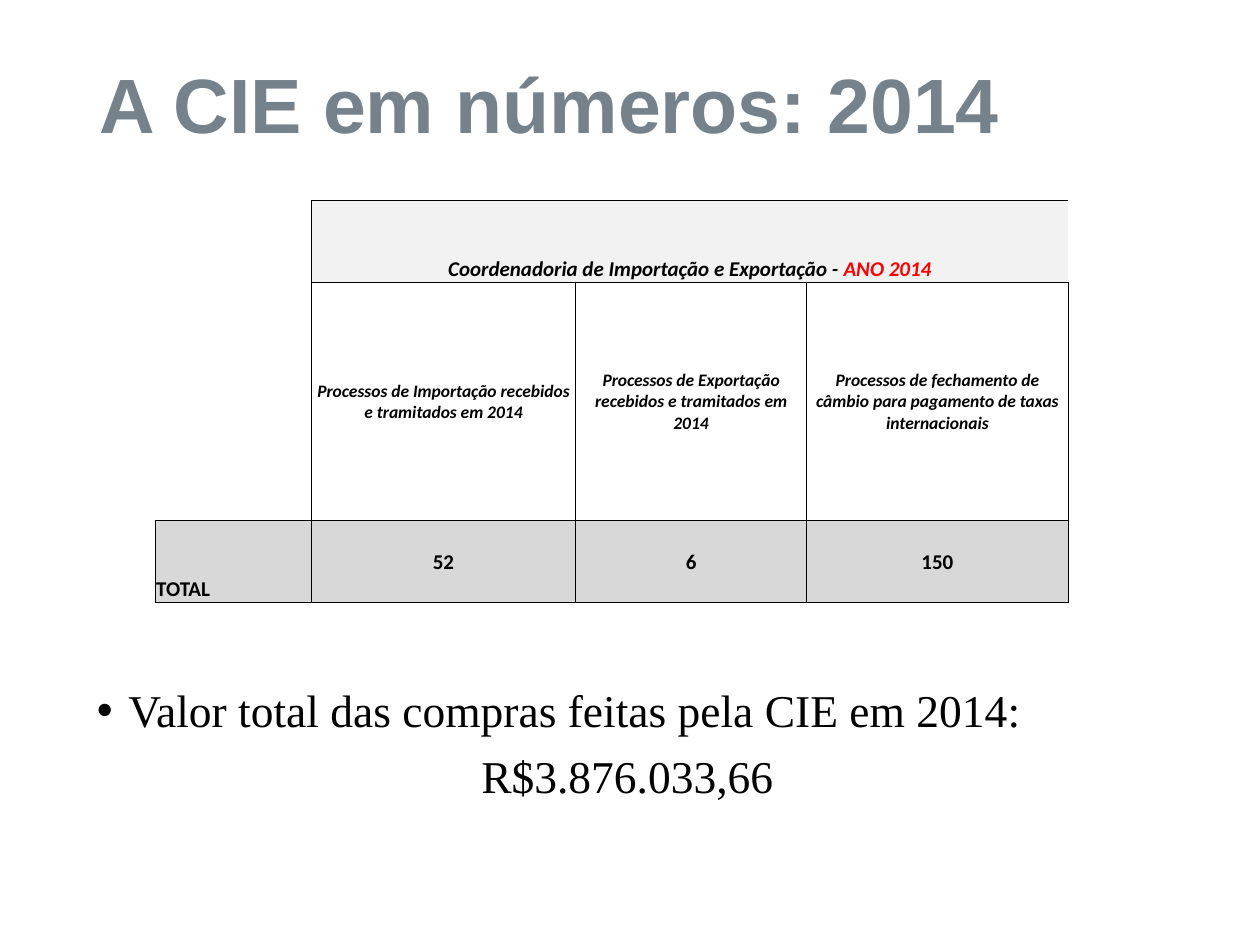
"""Builds the slide on the 2014 figures of the import and export office."""
from dataclasses import dataclass
from typing import Optional

import pptx
import pptx.dml.color
import pptx.enum.text
import pptx.oxml
import pptx.oxml.ns
import pptx.util
from pptx.util import Inches

ALIGN = pptx.enum.text.PP_ALIGN
ANCHOR = pptx.enum.text.MSO_ANCHOR


@dataclass(frozen=True)
class Theme:
    title: str = "75818B"
    ink: str = "000000"
    accent: str = "FF0000"
    header_fill: str = "F2F2F2"
    total_fill: str = "D8D8D8"
    title_font: str = "Arial"
    table_font: str = "Calibri"
    body_font: str = "Times New Roman"
    title_size: int = 44
    body_size: int = 26
    table_size: int = 12
    label_size: int = 10
    border: float = 0.5


@dataclass(frozen=True)
class Entry:
    row: int
    column: int
    text: str
    size: int
    italic: bool = False
    fill: Optional[str] = None
    align: ALIGN = ALIGN.CENTER
    anchor: ANCHOR = ANCHOR.MIDDLE
    accent: str = ""


THEME = Theme()
COLUMNS = (1.24, 2.1, 1.83, 2.08)
ROWS = (0.65, 1.89, 0.65, 0.43)
LABELS = (
    "Processos de Importação recebidos e tramitados em 2014",
    "Processos de Exportação recebidos e tramitados em 2014",
    "Processos de fechamento de câmbio para pagamento de taxas internacionais",
)
TOTALS = ("52", "6", "150")
ENTRIES = [
    Entry(0, 1, "Coordenadoria de Importação e Exportação - ", THEME.table_size, True,
          THEME.header_fill, anchor=ANCHOR.BOTTOM, accent="ANO 2014"),
    *(Entry(1, column, label, THEME.label_size, True)
      for column, label in enumerate(LABELS, 1)),
    Entry(2, 0, "TOTAL", THEME.table_size, fill=THEME.total_fill,
          align=ALIGN.LEFT, anchor=ANCHOR.BOTTOM),
    *(Entry(2, column, total, THEME.table_size, fill=THEME.total_fill)
      for column, total in enumerate(TOTALS, 1)),
]


def add_text(para, text: str, *, size: float, font: str, color: str,
             bold: bool = False, italic: bool = False) -> None:
    """Append a formatted run to a paragraph."""
    span = para.add_run()
    span.text = text
    span.font.size = pptx.util.Pt(size)
    span.font.name = font
    span.font.bold = bold
    span.font.italic = italic
    span.font.color.rgb = pptx.dml.color.RGBColor.from_string(color)


def set_borders(cell, sides: str) -> None:
    """Rule the named sides of a cell and clear the others."""
    properties = cell._tc.get_or_add_tcPr()
    for position, side in enumerate("LRTB"):
        line = pptx.oxml.parse_xml(
            f'<a:ln{side} {pptx.oxml.ns.nsdecls("a")} w="{int(THEME.border * 12700)}"/>')
        if side in sides:
            fill = pptx.oxml.ns.qn("a:solidFill")
            color = line.makeelement(pptx.oxml.ns.qn("a:srgbClr"), {"val": THEME.ink})
            solid = line.makeelement(fill, {})
            solid.append(color)
            line.append(solid)
        else:
            line.append(line.makeelement(pptx.oxml.ns.qn("a:noFill"), {}))
        properties.insert(position, line)


def border_sides(row: int, column: int) -> str:
    """Give the ruled sides of the cell at a grid position."""
    if row == 3:
        return "T"
    if row < 2 and column == 0:
        return "RB" if row == 1 else "R"
    if row == 0:
        return "TB" + {1: "L", 3: "R"}.get(column, "")
    return "LRTB"


def fill_cell(cell, entry: Entry) -> None:
    """Write one table entry into its cell."""
    cell.margin_left = cell.margin_right = cell.margin_top = Inches(0.01)
    cell.margin_bottom = 0
    cell.vertical_anchor = entry.anchor
    if entry.fill:
        cell.fill.solid()
        cell.fill.fore_color.rgb = pptx.dml.color.RGBColor.from_string(entry.fill)
    para = cell.text_frame.paragraphs[0]
    para.alignment = entry.align
    for text, color in ((entry.text, THEME.ink), (entry.accent, THEME.accent)):
        if text:
            add_text(para, text, size=entry.size, font=THEME.table_font,
                     color=color, bold=True, italic=entry.italic)


def add_title(page) -> None:
    """Place and format the title."""
    box = page.shapes.title
    box.left, box.top, box.width, box.height = map(Inches, (0.69, 0.4, 8.62, 0.93))
    box.text_frame.vertical_anchor = ANCHOR.MIDDLE
    para = box.text_frame.paragraphs[0]
    para.alignment = ALIGN.LEFT
    para.line_spacing = 0.9
    add_text(para, "A CIE em números: 2014", size=THEME.title_size,
             font=THEME.title_font, color=THEME.title, bold=True)


def add_figures(page) -> None:
    """Draw the table of processes."""
    table = page.shapes.add_table(
        len(ROWS), len(COLUMNS), Inches(1.23), Inches(1.59),
        Inches(sum(COLUMNS)), Inches(sum(ROWS))).table
    table.first_row = table.horz_banding = False
    for column, width in zip(table.columns, COLUMNS):
        column.width = Inches(width)
    for row, height in zip(table.rows, ROWS):
        row.height = Inches(height)
    for row in range(len(ROWS)):
        for column in range(len(COLUMNS)):
            cell = table.cell(row, column)
            cell.fill.background()
            set_borders(cell, border_sides(row, column))
    table.cell(0, 1).merge(table.cell(0, 3))
    table.cell(3, 0).merge(table.cell(3, 1))
    for entry in ENTRIES:
        fill_cell(table.cell(entry.row, entry.column), entry)


def add_purchases(page) -> None:
    """Write the total value of purchases."""
    box = page.shapes.add_textbox(*map(Inches, (0.67, 5.41, 8.62, 1.32)))
    box.text_frame.word_wrap = True
    heading = box.text_frame.paragraphs[0]
    amount = box.text_frame.add_paragraph()
    properties = heading._p.get_or_add_pPr()
    properties.set("marL", str(Inches(0.25)))
    properties.set("indent", str(Inches(-0.25)))
    namespace = pptx.oxml.ns.nsdecls("a")
    properties.append(pptx.oxml.parse_xml(f'<a:buFont {namespace} typeface="Arial"/>'))
    properties.append(pptx.oxml.parse_xml(f'<a:buChar {namespace} char="•"/>'))
    amount.alignment = ALIGN.CENTER
    amount.space_before = pptx.util.Pt(10)
    for para, text in ((heading, "Valor total das compras feitas pela CIE em 2014:"),
                       (amount, "R$3.876.033,66")):
        para.line_spacing = 0.9
        add_text(para, text, size=THEME.body_size, font=THEME.body_font, color=THEME.ink)


def main() -> None:
    """Build and save the deck."""
    deck = pptx.Presentation()
    deck.slide_width, deck.slide_height = Inches(10), Inches(7.5)
    page = deck.slides.add_slide(deck.slide_layouts[5])
    add_title(page)
    add_figures(page)
    add_purchases(page)
    deck.save("out.pptx")


if __name__ == "__main__":
    main()
